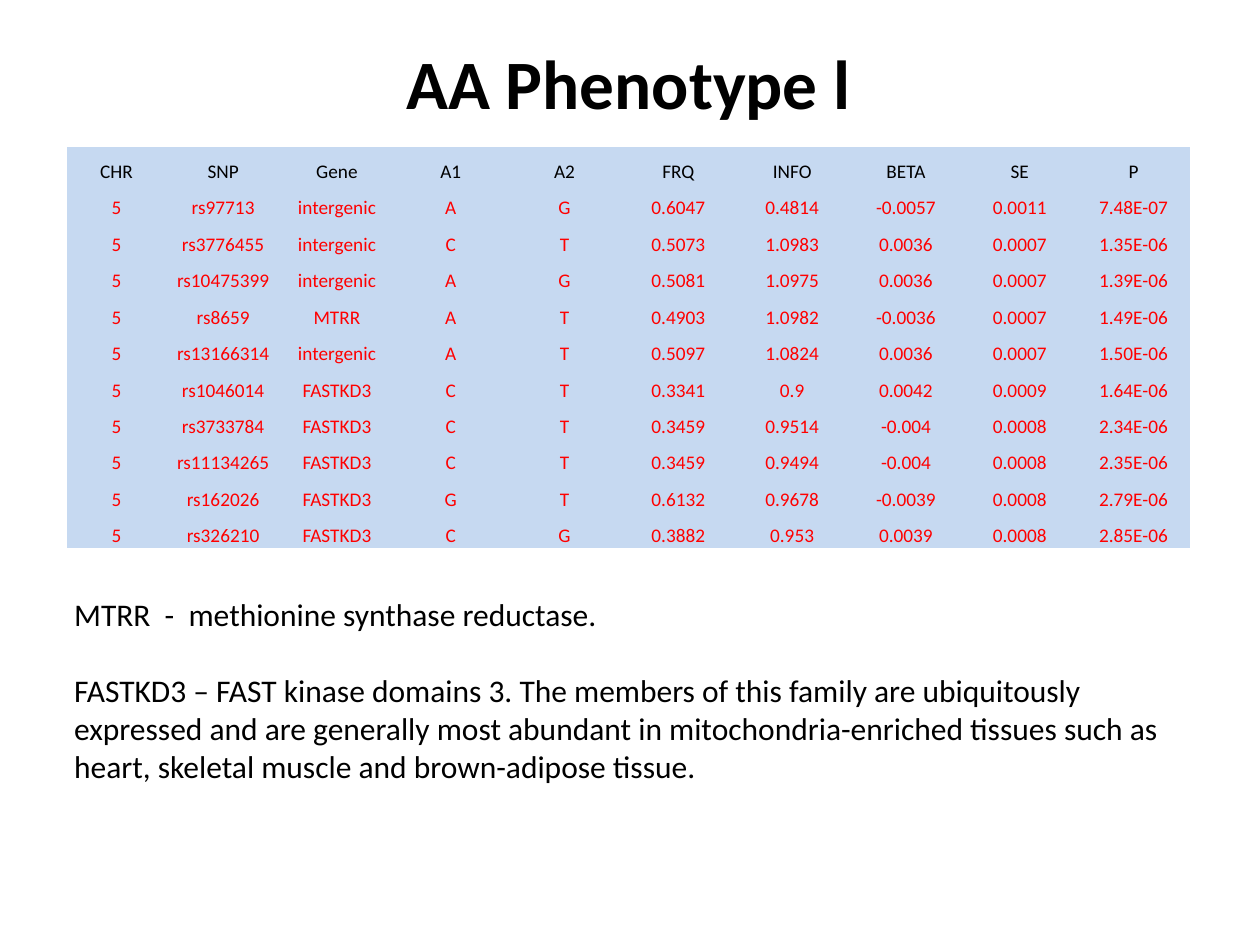
from pptx import Presentation as Deck
from pptx.dml.color import RGBColor as Rgb
from pptx.enum.text import MSO_ANCHOR as Anchor, PP_ALIGN as Align
from pptx.util import Inches, Pt

TITLE = "AA Phenotype l"
NOTES = [
    "MTRR  -  methionine synthase reductase.",
    "FASTKD3 – FAST kinase domains 3. The members of this family are ubiquitously "
    "expressed and are generally most abundant in mitochondria-enriched tissues such as "
    "heart, skeletal muscle and brown-adipose tissue.",
]
HITS = """
CHR SNP Gene A1 A2 FRQ INFO BETA SE P
5 rs97713 intergenic A G 0.6047 0.4814 -0.0057 0.0011 7.48E-07
5 rs3776455 intergenic C T 0.5073 1.0983 0.0036 0.0007 1.35E-06
5 rs10475399 intergenic A G 0.5081 1.0975 0.0036 0.0007 1.39E-06
5 rs8659 MTRR A T 0.4903 1.0982 -0.0036 0.0007 1.49E-06
5 rs13166314 intergenic A T 0.5097 1.0824 0.0036 0.0007 1.50E-06
5 rs1046014 FASTKD3 C T 0.3341 0.9 0.0042 0.0009 1.64E-06
5 rs3733784 FASTKD3 C T 0.3459 0.9514 -0.004 0.0008 2.34E-06
5 rs11134265 FASTKD3 C T 0.3459 0.9494 -0.004 0.0008 2.35E-06
5 rs162026 FASTKD3 G T 0.6132 0.9678 -0.0039 0.0008 2.79E-06
5 rs326210 FASTKD3 C G 0.3882 0.953 0.0039 0.0008 2.85E-06
"""
PLAIN = "{2D5ABB26-0587-4C30-8999-92F81FD0307C}"


def tint(code):
    return Rgb.from_string(code)


def apply(item, form):
    for key, value in form.items():
        setattr(item, key, value)


class Page:
    font = "Calibri"
    ink = "000000"
    hit = "FF0000"
    fill = "C6D9F1"

    def __init__(self, deck):
        self.unit = deck.slide_width / 100
        self.slide = deck.slides.add_slide(deck.slide_layouts[6])

    def span(self, *cols):
        return [round(col * self.unit) for col in cols]

    def line(self, para, text, size, color, bold=False, **form):
        apply(para, form)
        run = para.add_run()
        run.text = text
        apply(run.font, {"name": self.font, "size": Pt(size), "bold": bold})
        run.font.color.rgb = tint(color)

    def text(self, box, lines, size, bold=False, gap=0, top=0.05, align=Align.LEFT):
        frame = self.slide.shapes.add_textbox(*self.span(*box)).text_frame
        apply(frame, {"word_wrap": True, "margin_top": Inches(top)})
        for num, words in enumerate(lines):
            para = frame.add_paragraph() if num else frame.paragraphs[0]
            self.line(para, words, size, self.ink, bold,
                      alignment=align, space_before=Pt(gap if num else 0))

    def table(self, box, rows, first, size):
        count = len(rows[0])
        table = self.slide.shapes.add_table(len(rows), count, *self.span(*box)).table
        apply(table, {"first_row": False, "horz_banding": False})
        table._tbl.tblPr[0].text = PLAIN
        rest = (box[2] - first) / (count - 1)
        for num, col in enumerate(table.columns):
            col.width = self.span(rest if num else first)[0]
        edge = Inches(0.01)
        form = {"margin_left": edge, "margin_right": edge, "margin_top": edge,
                "margin_bottom": 0, "vertical_anchor": Anchor.BOTTOM}
        for r, row in enumerate(rows):
            for c, word in enumerate(row):
                cell = table.cell(r, c)
                apply(cell, form)
                cell.fill.solid()
                cell.fill.fore_color.rgb = tint(self.fill)
                self.line(cell.text_frame.paragraphs[0], word, size,
                          self.hit if r else self.ink, alignment=Align.CENTER)


def main():
    deck = Deck()
    apply(deck, {"slide_width": Inches(10), "slide_height": Inches(7.5)})
    page = Page(deck)
    page.text((4.9, 2.5, 90, 7.3), [TITLE], 39.6, bold=True, top=0.07, align=Align.CENTER)
    rows = [row.split() for row in HITS.strip().splitlines()]
    page.table((5.3, 11.7, 89.2, 31.8), rows, 7.9, 11)
    page.text((4.9, 46.7, 89.3, 16.2), NOTES, 18, gap=22)
    deck.save("out.pptx")


if __name__ == "__main__":
    main()
